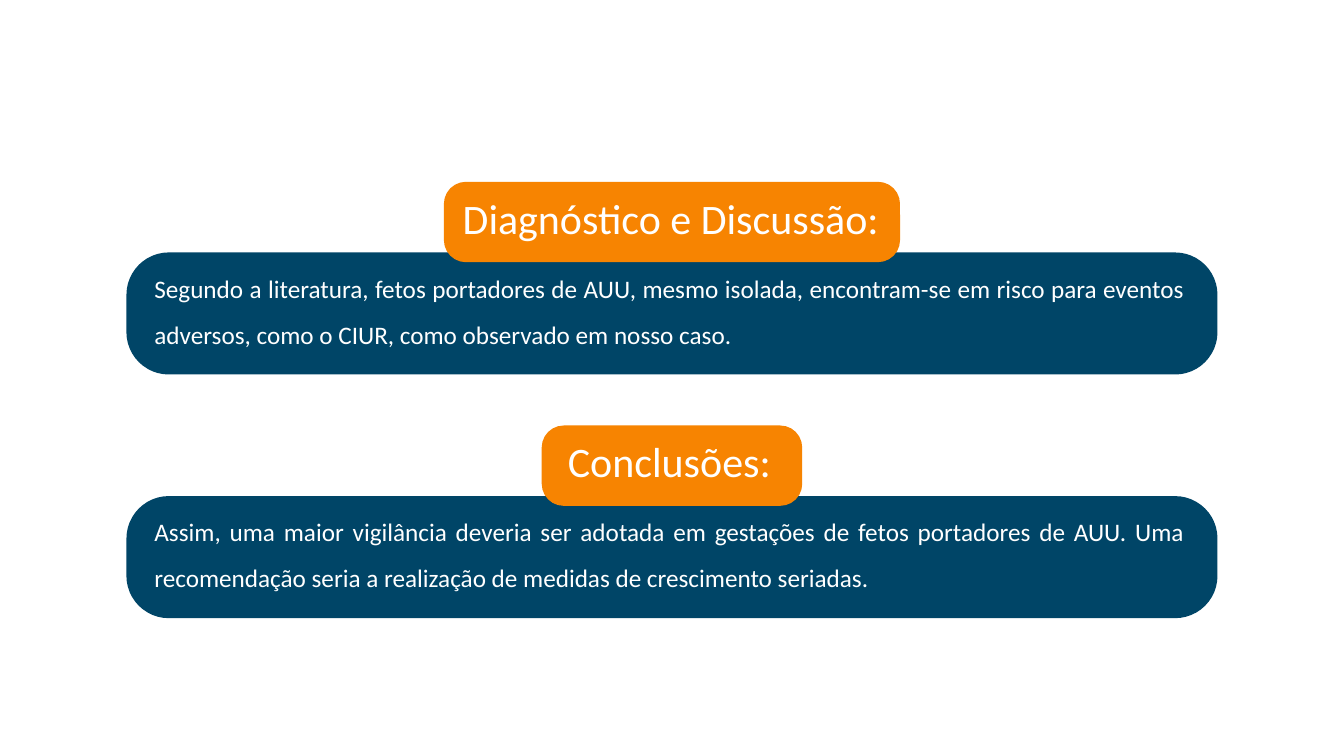
from dataclasses import dataclass

from lxml.etree import SubElement
from pptx import Presentation
from pptx.dml.color import RGBColor
from pptx.enum.shapes import MSO_SHAPE
from pptx.enum.text import MSO_ANCHOR, MSO_AUTO_SIZE, PP_ALIGN
from pptx.oxml.ns import qn
from pptx.shapes.autoshape import Shape
from pptx.slide import Slide
from pptx.util import Cm, Pt


@dataclass(frozen=True)
class Theme:
    navy: RGBColor = RGBColor(0x00, 0x45, 0x67)
    orange: RGBColor = RGBColor(0xF7, 0x84, 0x01)
    white: RGBColor = RGBColor(0xFF, 0xFF, 0xFF)
    font: str = "Calibri"
    head: float = 30
    body: float = 18


@dataclass(frozen=True)
class Block:
    width: float
    height: float
    radius: float
    fill: RGBColor


@dataclass(frozen=True)
class Line:
    text: str
    size: float
    align: PP_ALIGN
    pitch: float = 1.0
    before: float = 0


@dataclass(frozen=True)
class Frame:
    index: int
    left: float
    top: float
    width: float
    height: float
    lines: tuple[Line, ...]


THEME = Theme()
WIDE, HIGH = 33.87, 19.05
FIRST, STEP, DROP = 4.6, 6.14, 1.78

PANEL = Block(27.46, 3.04, 0.345, THEME.navy)
TAGS = [Block(wide, 1.99, 0.27, THEME.orange) for wide in (11.46, 6.53)]

FRAMES = [
    Frame(0, 11.66, 4.8, 10.57, 1.35, (
        Line("Diagnóstico e Discussão:", THEME.head, PP_ALIGN.LEFT),
    )),
    Frame(1, 3.89, 6.45, 25.96, 2.36, (
        Line("Segundo a literatura, fetos portadores de AUU, mesmo isolada, "
             "encontram-se em risco para eventos adversos, como o CIUR, "
             "como observado em nosso caso.",
             THEME.body, PP_ALIGN.JUSTIFY, 1.5),
    )),
    Frame(2, 3.89, 10.92, 25.96, 4.01, (
        Line("Conclusões:", THEME.head, PP_ALIGN.CENTER),
        Line("Assim, uma maior vigilância deveria ser adotada em gestações "
             "de fetos portadores de AUU. Uma recomendação seria a "
             "realização de medidas de crescimento seriadas.",
             THEME.body, PP_ALIGN.JUSTIFY, 1.5, 11),
    )),
]


def draw_block(slide: Slide, block: Block, top: float) -> None:
    """Draw a rounded block centred across the slide."""
    left = (WIDE - block.width) / 2
    shape = slide.shapes.add_shape(
        MSO_SHAPE.ROUNDED_RECTANGLE,
        Cm(left), Cm(top), Cm(block.width), Cm(block.height))
    shape.adjustments[0] = block.radius
    shape.shadow.inherit = False
    shape.fill.solid()
    shape.fill.fore_color.rgb = block.fill
    shape.line.color.rgb = block.fill
    shape.line.width = Pt(1)


def fill_frame(holder: Shape, item: Frame) -> None:
    """Place a placeholder in front of the blocks and set its text."""
    holder.left, holder.top = Cm(item.left), Cm(item.top)
    holder.width, holder.height = Cm(item.width), Cm(item.height)
    holder.element.getparent().append(holder.element)

    frame = holder.text_frame
    frame.word_wrap = True
    frame.auto_size = MSO_AUTO_SIZE.NONE
    frame.vertical_anchor = MSO_ANCHOR.TOP
    frame.margin_left = frame.margin_right = frame.margin_bottom = 0
    frame.margin_top = Cm(0.06)

    for order, line in enumerate(item.lines):
        para = frame.add_paragraph() if order else frame.paragraphs[0]
        para.text = line.text
        para.alignment = line.align
        para.line_spacing = line.pitch
        para.space_before = Pt(line.before)
        para.space_after = Pt(0)
        props = para._p.get_or_add_pPr()
        props.set("marL", "0")
        props.set("indent", "0")
        SubElement(props, qn("a:buNone"))
        para.font.name = THEME.font
        para.font.size = Pt(line.size)
        para.font.color.rgb = THEME.white


def main() -> None:
    deck = Presentation()
    deck.slide_width, deck.slide_height = Cm(WIDE), Cm(HIGH)
    slide = deck.slides.add_slide(deck.slide_layouts.get_by_name("Two Content"))

    # Panels with their heading tags
    for row, tag in enumerate(TAGS):
        top = FIRST + row * STEP
        draw_block(slide, PANEL, top + DROP)
        draw_block(slide, tag, top)

    # Title and body text
    for item in FRAMES:
        fill_frame(slide.placeholders[item.index], item)

    deck.save("out.pptx")


if __name__ == "__main__":
    main()
